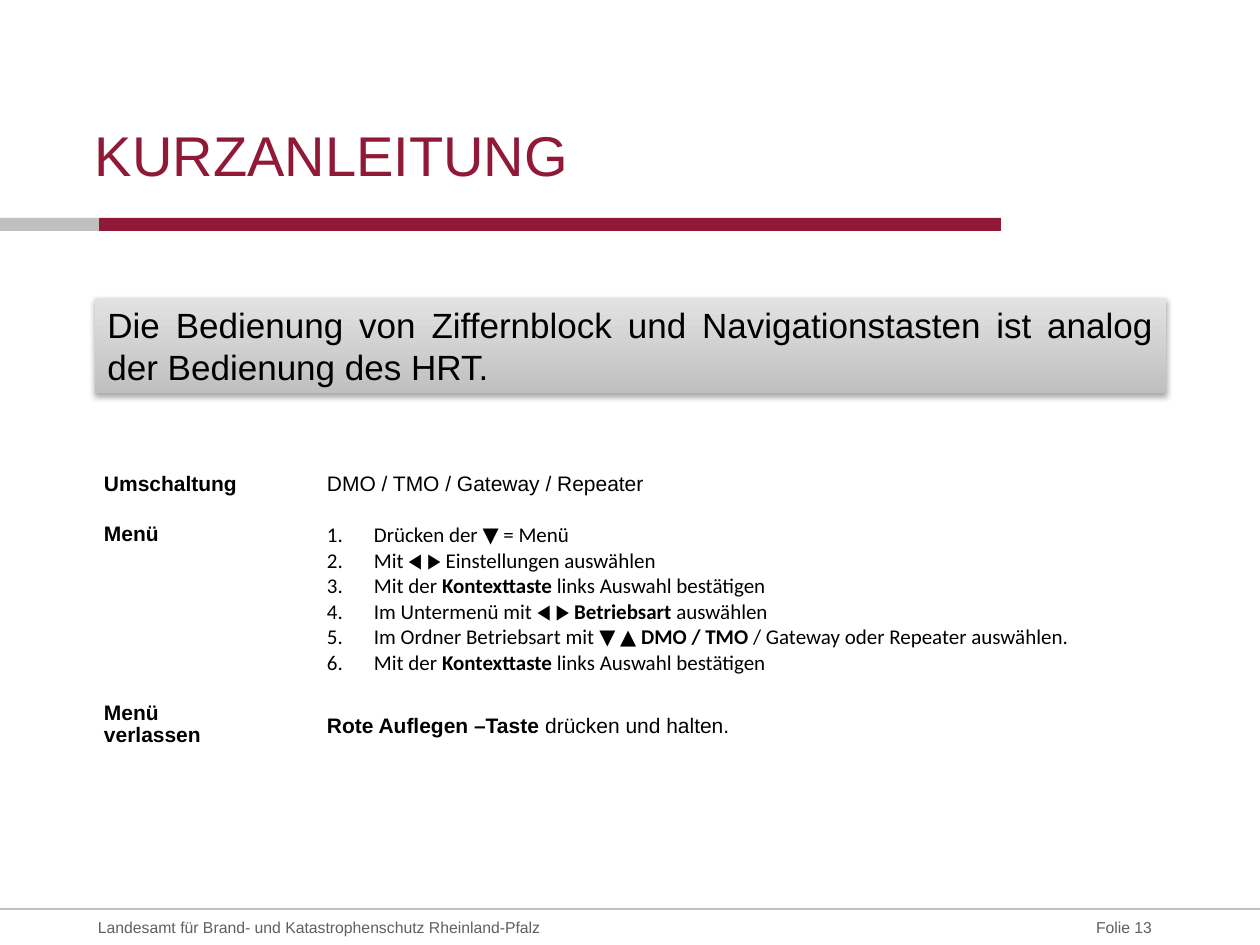
from lxml import etree
from pptx import Presentation
from pptx.dml.color import RGBColor
from pptx.enum.shapes import MSO_CONNECTOR, MSO_SHAPE
from pptx.enum.text import MSO_ANCHOR, PP_ALIGN
from pptx.oxml.ns import qn
from pptx.util import Emu, Pt

RECT, STRAIGHT = MSO_SHAPE.RECTANGLE, MSO_CONNECTOR.STRAIGHT
TOP, MIDDLE, BOTTOM = MSO_ANCHOR.TOP, MSO_ANCHOR.MIDDLE, MSO_ANCHOR.BOTTOM
LEFT, RIGHT, JUSTIFY = PP_ALIGN.LEFT, PP_ALIGN.RIGHT, PP_ALIGN.JUSTIFY

COLORS = {"red": "8F1936", "grey": "C0C0C0", "light": "E2E2E2",
          "footer": "606060", "black": "000000"}
COLUMNS = [223, 761]
ROWS = [23, 24, 154, 26, 46]
STEPS = [
    [("Drücken der ▼ = Menü", False)],
    [("Mit ◀ ▶ Einstellungen auswählen", False)],
    [("Mit der ", False), ("Kontexttaste", True), (" links Auswahl bestätigen", False)],
    [("Im Untermenü mit ◀ ▶ ", False), ("Betriebsart", True), (" auswählen", False)],
    [("Im Ordner Betriebsart mit ▼ ▲ ", False), ("DMO / TMO", True),
     (" / Gateway oder Repeater auswählen.", False)],
]
STEPS.append(STEPS[2])


def px(n):
    return Emu(round(n * 914400 / 126))


def rgb(name):
    return RGBColor.from_string(COLORS[name])


def add_run(p, text, size, color="black", font="Arial", bold=False):
    r = p.add_run()
    r.text = text
    r.font.name = font
    r.font.size = Pt(size)
    r.font.bold = bold
    r.font.color.rgb = rgb(color)


def add_text(s, box, text, size, color, anchor=MIDDLE, align=LEFT, right=0):
    tf = s.shapes.add_textbox(*map(px, box)).text_frame
    tf.word_wrap = True
    tf.vertical_anchor = anchor
    tf.margin_left = tf.margin_top = tf.margin_bottom = 0
    tf.margin_right = px(right)
    p = tf.paragraphs[0]
    p.alignment = align
    add_run(p, text, size, color)


def add_bar(s, box, color):
    sp = s.shapes.add_shape(RECT, *map(px, box))
    sp.shadow.inherit = False
    sp.fill.solid()
    sp.fill.fore_color.rgb = rgb(color)
    sp.line.fill.background()


def add_rule(s, y, width):
    line = s.shapes.add_connector(STRAIGHT, 0, px(y), px(width), px(y))
    line.line.color.rgb = rgb("grey")
    line.line.width = Pt(0.75)
    etree.SubElement(line._element.spPr, qn("a:effectLst"))


def add_drop_shadow(sp):
    sp.shadow.inherit = False
    effects = sp._element.spPr.find(qn("a:effectLst"))
    shadow = etree.SubElement(effects, qn("a:outerShdw"), blurRad=str(Pt(3.1)),
                              dist=str(Pt(1.8)), dir="5400000", rotWithShape="0")
    color = etree.SubElement(shadow, qn("a:srgbClr"), val=COLORS["black"])
    etree.SubElement(color, qn("a:alpha"), val="35000")


def add_banner(s, box, text):
    sp = s.shapes.add_shape(RECT, *map(px, box))
    sp.fill.gradient()
    sp.fill.gradient_angle = 90
    for stop, color, position in zip(sp.fill.gradient_stops, ("grey", "light"), (0, 1)):
        stop.color.rgb = rgb(color)
        stop.position = position
    sp.line.fill.background()
    add_drop_shadow(sp)
    tf = sp.text_frame
    tf.word_wrap = True
    tf.vertical_anchor = MIDDLE
    p = tf.paragraphs[0]
    p.alignment = JUSTIFY
    add_run(p, text, 20)


def add_table(s, left, top):
    frame = s.shapes.add_table(len(ROWS), len(COLUMNS), px(left), px(top),
                               px(sum(COLUMNS)), px(sum(ROWS)))
    table = frame.table
    table.first_row = table.horz_banding = False
    for column, width in zip(table.columns, COLUMNS):
        column.width = px(width)
    for row, height in zip(table.rows, ROWS):
        row.height = px(height)
    for cell in table.iter_cells():
        cell.fill.background()
        cell.margin_left = cell.margin_right = px(9)
        cell.margin_top = cell.margin_bottom = 0
        p = cell.text_frame.paragraphs[0]
        etree.SubElement(p._p, qn("a:endParaRPr"), sz="1200")
    return table


def fill_cell(cell, runs, align=JUSTIFY, anchor=TOP):
    cell.vertical_anchor = anchor
    p = cell.text_frame.paragraphs[0]
    p.alignment = align
    for text, bold in runs:
        add_run(p, text, 12, bold=bold)
    return p


def fill_steps(cell, steps):
    tf = cell.text_frame
    for i, runs in enumerate(steps):
        p = tf.add_paragraph() if i else tf.paragraphs[0]
        p.alignment = JUSTIFY
        pPr = p._p.get_or_add_pPr()
        pPr.set("marL", str(px(47)))
        pPr.set("indent", str(-px(47)))
        etree.SubElement(pPr, qn("a:buFont"), typeface="Calibri")
        etree.SubElement(pPr, qn("a:buAutoNum"), type="arabicPeriod")
        for text, bold in runs:
            add_run(p, text, 12, font="Calibri", bold=bold)


def main():
    prs = Presentation()
    prs.slide_width, prs.slide_height = px(1260), px(945)
    s = prs.slides.add_slide(prs.slide_layouts[6])

    add_bar(s, (99, 218, 902, 13), "red")
    add_bar(s, (0, 218, 99, 13), "grey")
    add_rule(s, 909, 1260)
    add_text(s, (1000, 910, 160, 35), "Folie 13", 9, "footer", align=RIGHT, right=8)
    add_text(s, (98, 910, 694, 35),
             "Landesamt für Brand- und Katastrophenschutz Rheinland-Pfalz", 9, "footer")
    add_text(s, (95, 60, 805, 128), "KURZANLEITUNG", 32, "red", anchor=BOTTOM)

    table = add_table(s, 95, 472)
    fill_cell(table.cell(0, 0), [("Umschaltung", True)])
    fill_cell(table.cell(0, 1), [("DMO / TMO / Gateway / Repeater", False)])
    fill_cell(table.cell(2, 0), [("Menü", True)])
    fill_steps(table.cell(2, 1), STEPS)
    p = fill_cell(table.cell(4, 0), [("Menü", True)], LEFT)
    p.line_spacing = 0.95
    p.add_line_break()
    add_run(p, "verlassen", 12, bold=True)
    fill_cell(table.cell(4, 1), [("Rote Auflegen –Taste", True),
                                 (" drücken und halten.", False)], LEFT, MIDDLE)

    add_banner(s, (95, 298, 1071, 95),
               "Die Bedienung von Ziffernblock und Navigationstasten ist analog "
               "der Bedienung des HRT.")
    prs.save("out.pptx")


if __name__ == "__main__":
    main()
